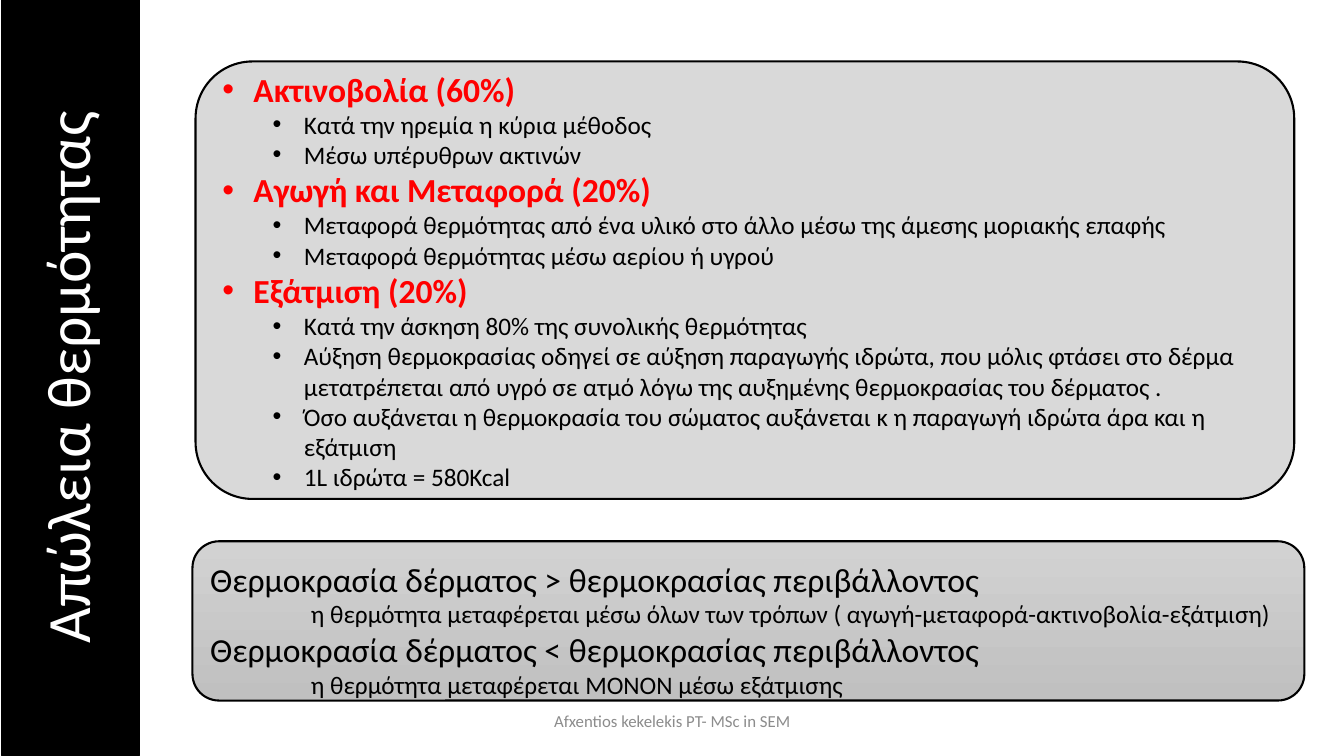
from dataclasses import dataclass

from lxml import etree
from pptx import Presentation, util as u
from pptx.dml.color import RGBColor
from pptx.enum import shapes, text
from pptx.oxml import ns

WIDTH, HEIGHT = u.Inches(13.33), u.Inches(7.5)


@dataclass(frozen=True)
class Theme:
    font: str = "Calibri"
    ink: str = "000000"
    paper: str = "FFFFFF"
    accent: str = "FF0000"
    muted: str = "8C8C8C"
    panel: str = "D9D9D9"
    shade_top: str = "D2D2D2"
    shade_bottom: str = "C0C0C0"
    title_size: int = 44
    heading_size: int = 24
    detail_size: int = 18
    footer_size: int = 12
    outline: float = 1.5


@dataclass(frozen=True)
class Frame:
    """A rectangle in percent of the slide's width and height."""
    left: float
    top: float
    width: float
    height: float

    def lengths(self) -> tuple[int, int, int, int]:
        return (int(WIDTH * self.left / 100), int(HEIGHT * self.top / 100),
                int(WIDTH * self.width / 100), int(HEIGHT * self.height / 100))


@dataclass(frozen=True)
class Topic:
    heading: str
    details: tuple[str, ...]


THEME = Theme()
TITLE_FRAME = Frame(-22.88, 40.8, 56.25, 18.27)
LOSSES_FRAME = Frame(14.55, 8.13, 81.75, 57.87)
RULES_FRAME = Frame(14.32, 71.6, 82.73, 21.07)
FOOTER_FRAME = Frame(33.15, 92.67, 33.75, 5.33)

LOSSES = (
    Topic("Ακτινοβολία (60%)", (
        "Κατά την ηρεμία η κύρια μέθοδος",
        "Μέσω υπέρυθρων ακτινών")),
    Topic("Αγωγή και Μεταφορά (20%)", (
        "Μεταφορά θερμότητας από ένα υλικό στο άλλο μέσω της άμεσης μοριακής επαφής",
        "Μεταφορά θερμότητας μέσω αερίου ή υγρού")),
    Topic("Εξάτμιση (20%)", (
        "Κατά την άσκηση 80% της συνολικής θερμότητας",
        "Αύξηση θερμοκρασίας οδηγεί σε αύξηση παραγωγής ιδρώτα, που μόλις φτάσει στο δέρμα "
        "μετατρέπεται από υγρό σε ατμό λόγω της αυξημένης θερμοκρασίας του δέρματος .",
        "Όσο αυξάνεται η θερμοκρασία του σώματος αυξάνεται κ η παραγωγή ιδρώτα άρα και η εξάτμιση",
        "1L ιδρώτα = 580Kcal")),
)
RULES = (
    Topic("Θερμοκρασία δέρματος > θερμοκρασίας περιβάλλοντος", (
        "η θερμότητα μεταφέρεται μέσω όλων των τρόπων ( αγωγή-μεταφορά-ακτινοβολία-εξάτμιση)",)),
    Topic("Θερμοκρασία δέρματος < θερμοκρασίας περιβάλλοντος", (
        "η θερμότητα μεταφέρεται ΜΟΝΟΝ μέσω εξάτμισης",)),
)


def color(value: str) -> RGBColor:
    return RGBColor.from_string(value)


def place(box, frame: Frame) -> None:
    box.left, box.top, box.width, box.height = frame.lengths()


def outline(box, points: float) -> None:
    box.line.color.rgb = color(THEME.ink)
    box.line.width = u.Pt(points)


def prepare_text(box):
    frame = box.text_frame
    frame.word_wrap = True
    frame.auto_size = text.MSO_AUTO_SIZE.NONE
    frame.vertical_anchor = text.MSO_ANCHOR.MIDDLE
    return frame


def add_span(para, words: str, size: int, ink: str, bold: bool = False) -> None:
    span = para.add_run()
    span.text = words
    span.font.name = THEME.font
    span.font.size = u.Pt(size)
    span.font.bold = bold
    span.font.color.rgb = color(ink)


def indent(para, left: float, hanging: float = 0, bullet: str = "") -> None:
    """Set the paragraph's indents in inches and its bullet sign, if any."""
    props = para._p.get_or_add_pPr()
    props.set("marL", str(u.Inches(left)))
    props.set("indent", str(-u.Inches(hanging)))
    if bullet:
        etree.SubElement(props, ns.qn("a:buFont"), typeface="Arial")
        etree.SubElement(props, ns.qn("a:buChar"), char=bullet)


def write_topics(box, topics: tuple[Topic, ...], heading_ink: str, bold: bool,
                 indents: tuple[float, float], hanging: float = 0, bullet: str = "") -> None:
    frame = prepare_text(box)
    lines = [line for topic in topics
             for line in [(0, topic.heading), *((1, detail) for detail in topic.details)]]
    for number, (level, words) in enumerate(lines):
        para = frame.add_paragraph() if number else frame.paragraphs[0]
        para.level = level
        para.alignment = text.PP_ALIGN.LEFT
        indent(para, indents[level], hanging, bullet)
        para.space_before = u.Pt(0)
        if level:
            add_span(para, words, THEME.detail_size, THEME.ink)
        else:
            add_span(para, words, THEME.heading_size, heading_ink, bold)


def round_corners(box, share: float) -> None:
    """Give a placeholder a rounded outline."""
    geometry = etree.SubElement(box._element.spPr, ns.qn("a:prstGeom"), prst="roundRect")
    guides = etree.SubElement(geometry, ns.qn("a:avLst"))
    etree.SubElement(guides, ns.qn("a:gd"), name="adj", fmla=f"val {round(share * 100000)}")


def fill_title(box) -> None:
    place(box, TITLE_FRAME)
    box.rotation = 270
    box.fill.solid()
    box.fill.fore_color.rgb = color(THEME.ink)
    outline(box, 1)
    para = prepare_text(box).paragraphs[0]
    para.alignment = text.PP_ALIGN.CENTER
    para.line_spacing = 0.9
    add_span(para, "Απώλεια θερμότητας", THEME.title_size, THEME.paper)


def fill_losses(box) -> None:
    place(box, LOSSES_FRAME)
    round_corners(box, 0.13)
    box.fill.solid()
    box.fill.fore_color.rgb = color(THEME.panel)
    outline(box, THEME.outline)
    write_topics(box, LOSSES, THEME.accent, True, (0.31, 0.81), 0.31, "•")


def add_rules(page) -> None:
    box = page.shapes.add_shape(shapes.MSO_SHAPE.ROUNDED_RECTANGLE, *RULES_FRAME.lengths())
    box.shadow.inherit = False
    box.fill.gradient()
    box.fill.gradient_angle = 270
    for stop, shade in zip(box.fill.gradient_stops, (THEME.shade_top, THEME.shade_bottom)):
        stop.color.rgb = color(shade)
    outline(box, THEME.outline)
    write_topics(box, RULES, THEME.ink, False, (0, 1))
    box.text_frame.margin_top = u.Inches(0.16)
    box.text_frame.margin_bottom = 0


def add_footer(page) -> None:
    box = page.shapes.add_textbox(*FOOTER_FRAME.lengths())
    para = prepare_text(box).paragraphs[0]
    para.alignment = text.PP_ALIGN.CENTER
    add_span(para, "Afxentios kekelekis PT- MSc in SEM", THEME.footer_size, THEME.muted)


def main() -> None:
    deck = Presentation()
    deck.slide_width, deck.slide_height = WIDTH, HEIGHT
    page = deck.slides.add_slide(deck.slide_layouts[1])
    fill_title(page.shapes.title)
    fill_losses(page.placeholders[1])
    add_rules(page)
    add_footer(page)
    deck.save("out.pptx")


if __name__ == "__main__":
    main()
